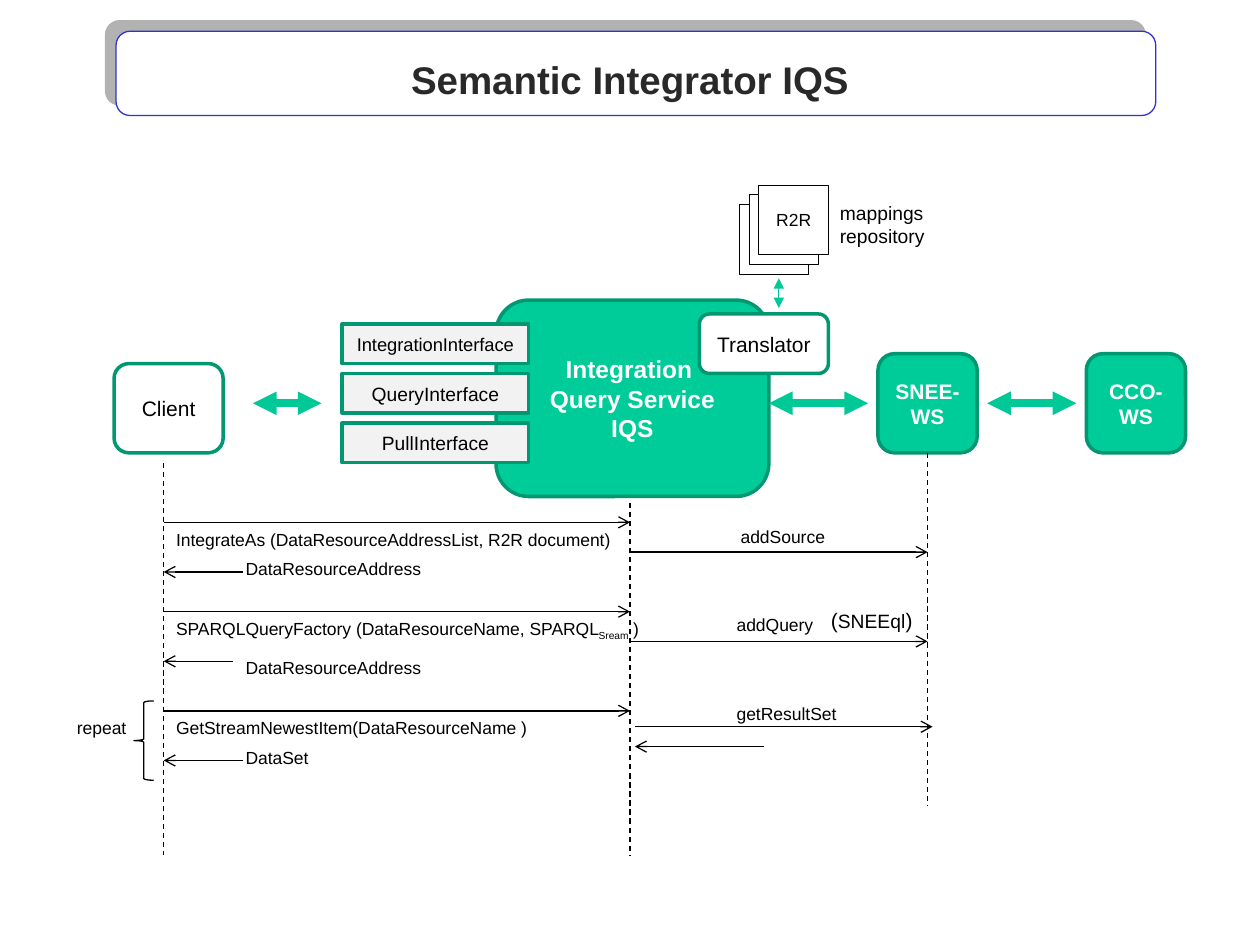
from lxml.etree import SubElement
from pptx import Presentation
from pptx.dml.color import RGBColor
from pptx.enum.dml import MSO_LINE
from pptx.enum.shapes import MSO_CONNECTOR, MSO_SHAPE
from pptx.enum.text import MSO_ANCHOR, PP_ALIGN
from pptx.oxml.ns import qn
from pptx.util import Inches, Pt

COLUMNS = 127
UNIT = 10 / COLUMNS
TOP_MARGIN = 0.65
BLACK, WHITE, GRAY = "000000", "FFFFFF", "F2F2F2"
GREEN, EDGE, ARROW = "00CC99", "009771", "00C896"
CLIENT, SERVICE, SOURCE = 16.5, 63.5, 93.5
AXIS = 40

TITLE = "Semantic Integrator IQS"
BLOCKS = [
    ("Integration \nQuery Service\nIQS", (50, 29.6, 27.5, 19.8), GREEN, 14),
    ("Translator", (70.5, 31, 13, 6), WHITE, 12),
    ("Client", (11.5, 36, 11, 9), WHITE, 12),
    ("SNEE-WS", (88.5, 35, 10, 10), GREEN, 12),
    ("CCO-WS", (109.5, 35, 10, 10), GREEN, 12),
]
INTERFACES = [("IntegrationInterface", 10.5), ("QueryInterface", 11), ("PullInterface", 11)]
MAPPING_CARDS = ["", "", "R2R"]
LINKS = [(25.5, 32.4), (77.5, 87.5), (99.5, 108.5)]
LIFELINES = [(CLIENT, 46, 85.5), (SERVICE, 50, 85.5), (SOURCE, 45, 80.5)]
MESSAGES = [
    (CLIENT, SERVICE, 52), (23.5 + 1, CLIENT, 57), (SERVICE, SOURCE, 55),
    (CLIENT, SERVICE, 61), (23.5, CLIENT, 66), (SERVICE, SOURCE, 64),
    (CLIENT, SERVICE, 71), (24.5, CLIENT, 76),
    (SERVICE + 0.5, SOURCE + 0.5, 72.6), (77, SERVICE + 0.5, 74.6),
]
LABELS = [
    ([("IntegrateAs (DataResourceAddressList, R2R document)", 10)], CLIENT, 52, 47),
    ([("DataResourceAddress", 10)], 23.5, 55, 31.5),
    ([("SPARQLQueryFactory (DataResourceName, SPARQL", 10), ("Sream", 10, -25), (" )", 10)],
     CLIENT, 61, 53),
    ([("DataResourceAddress", 10)], 23.5, 65, 31.5),
    ([("GetStreamNewestItem(DataResourceName )", 10)], CLIENT, 71, 49.5),
    ([("DataSet", 10)], 23.5, 74, 16),
    ([("repeat", 10)], 6.5, 71, 10),
    ([("addSource", 10)], 73.4, 51.7, 12.5),
    ([("addQuery", 10)], 73, 60.6, 12.5),
    ([("getResultSet", 10)], 73, 69.6, 16),
    ([("(", 12), ("SNEEql", 11), (")", 12)], 82.5, 60, 11),
]


def color(value):
    return RGBColor.from_string(value)


def across(value):
    return Inches(value * UNIT)


def down(value):
    return Inches((value + TOP_MARGIN) * UNIT)


def area(left, top, width, height):
    return across(left), down(top), across(width), across(height)


def write(shape, text, size=10, ink=BLACK, bold=False, align=PP_ALIGN.CENTER,
          anchor=MSO_ANCHOR.MIDDLE):
    """Fill a shape with text: a string of lines, or a list of (text, size, baseline) spans."""
    frame = shape.text_frame
    frame.word_wrap = True
    frame.vertical_anchor = anchor
    lines = [[(line, size)] for line in text.split("\n")] if isinstance(text, str) else [text]
    for index, spans in enumerate(lines):
        para = frame.add_paragraph() if index else frame.paragraphs[0]
        para.alignment = align
        for words, points, *baseline in spans:
            span = para.add_run()
            span.text = words
            span.font.name = "Arial"
            span.font.size = Pt(points)
            span.font.bold = bold
            span.font.color.rgb = color(ink)
            if baseline:
                span.font._element.set("baseline", str(baseline[0] * 1000))


def add_box(page, kind, place, fill, line, weight):
    box = page.shapes.add_shape(kind, *area(*place))
    box.shadow.inherit = False
    if fill:
        box.fill.solid()
        box.fill.fore_color.rgb = color(fill)
    else:
        box.fill.background()
    box.line.color.rgb = color(line)
    box.line.width = Pt(weight)
    return box


def add_line(page, start, end, ink=BLACK, weight=0.75, dashed=False, head=None, tail=None):
    line = page.shapes.add_connector(MSO_CONNECTOR.STRAIGHT, across(start[0]), down(start[1]),
                                     across(end[0]), down(end[1]))
    line.line.color.rgb = color(ink)
    line.line.width = Pt(weight)
    if dashed:
        line.line.dash_style = MSO_LINE.DASH
    outline = line.line._get_or_add_ln()
    for tag, arrow in (("a:headEnd", head), ("a:tailEnd", tail)):
        if arrow:
            SubElement(outline, qn(tag), type=arrow)
    SubElement(line._element.spPr, qn("a:effectLst"))


def add_label(page, text, left, top, width, height=3.4, **style):
    box = page.shapes.add_textbox(*area(left, top, width, height))
    write(box, text, **style)


def add_title(page):
    frame = add_box(page, MSO_SHAPE.ROUNDED_RECTANGLE, (11.7, 2.5, 104.8, 8.5),
                    WHITE, "3333CC", 0.75)
    effects = frame._element.spPr.find(qn("a:effectLst"))
    shadow = SubElement(effects, qn("a:outerShdw"), dist=str(Pt(8.5)),
                        dir=str(225 * 60000), algn="ctr", rotWithShape="0")
    SubElement(shadow, qn("a:srgbClr"), val="B2B2B2")
    add_label(page, TITLE, 12.2, 3.7, 102.6, 6.6, size=22, ink="292929", bold=True,
              anchor=MSO_ANCHOR.BOTTOM)


def add_components(page):
    for text, place, fill, size in BLOCKS:
        box = add_box(page, MSO_SHAPE.ROUNDED_RECTANGLE, place, fill, EDGE, 2)
        solid = fill == GREEN
        write(box, text, size=size, ink=WHITE if solid else BLACK, bold=solid)
    for row, (text, size) in enumerate(INTERFACES):
        box = add_box(page, MSO_SHAPE.RECTANGLE, (34.5, 32 + 5 * row, 18.8, 4), GRAY, EDGE, 2)
        write(box, text, size=size)
    for step, text in enumerate(MAPPING_CARDS):
        card = add_box(page, MSO_SHAPE.RECTANGLE, (74.5 + step, 20 - step, 7, 7),
                       WHITE, BLACK, 0.5)
        if text:
            write(card, text)
    add_label(page, "mappings\nrepository", 83.4, 19, 12, 6, size=11,
              align=PP_ALIGN.LEFT, anchor=MSO_ANCHOR.TOP)
    both = {"ink": ARROW, "head": "triangle", "tail": "triangle"}
    for left, right in LINKS:
        add_line(page, (left, AXIS), (right, AXIS), weight=4.5, **both)
    add_line(page, (78.5, 27.4), (78.5, 30.4), **both)


def add_sequence(page):
    for lane, top, bottom in LIFELINES:
        add_line(page, (lane, top), (lane, bottom), dashed=True)
    for start, end, row in MESSAGES:
        add_line(page, (start, row), (end, row), tail="arrow")
    for text, left, top, width in LABELS:
        add_label(page, text, left, top, width, align=PP_ALIGN.LEFT, anchor=MSO_ANCHOR.TOP)
    add_box(page, MSO_SHAPE.LEFT_BRACE, (13.5, 70, 2, 8), None, BLACK, 0.75)


def main():
    deck = Presentation()
    deck.slide_width, deck.slide_height = Inches(10), Inches(7.5)
    page = deck.slides.add_slide(deck.slide_layouts[6])
    add_title(page)
    add_components(page)
    add_sequence(page)
    deck.save("out.pptx")


if __name__ == "__main__":
    main()
